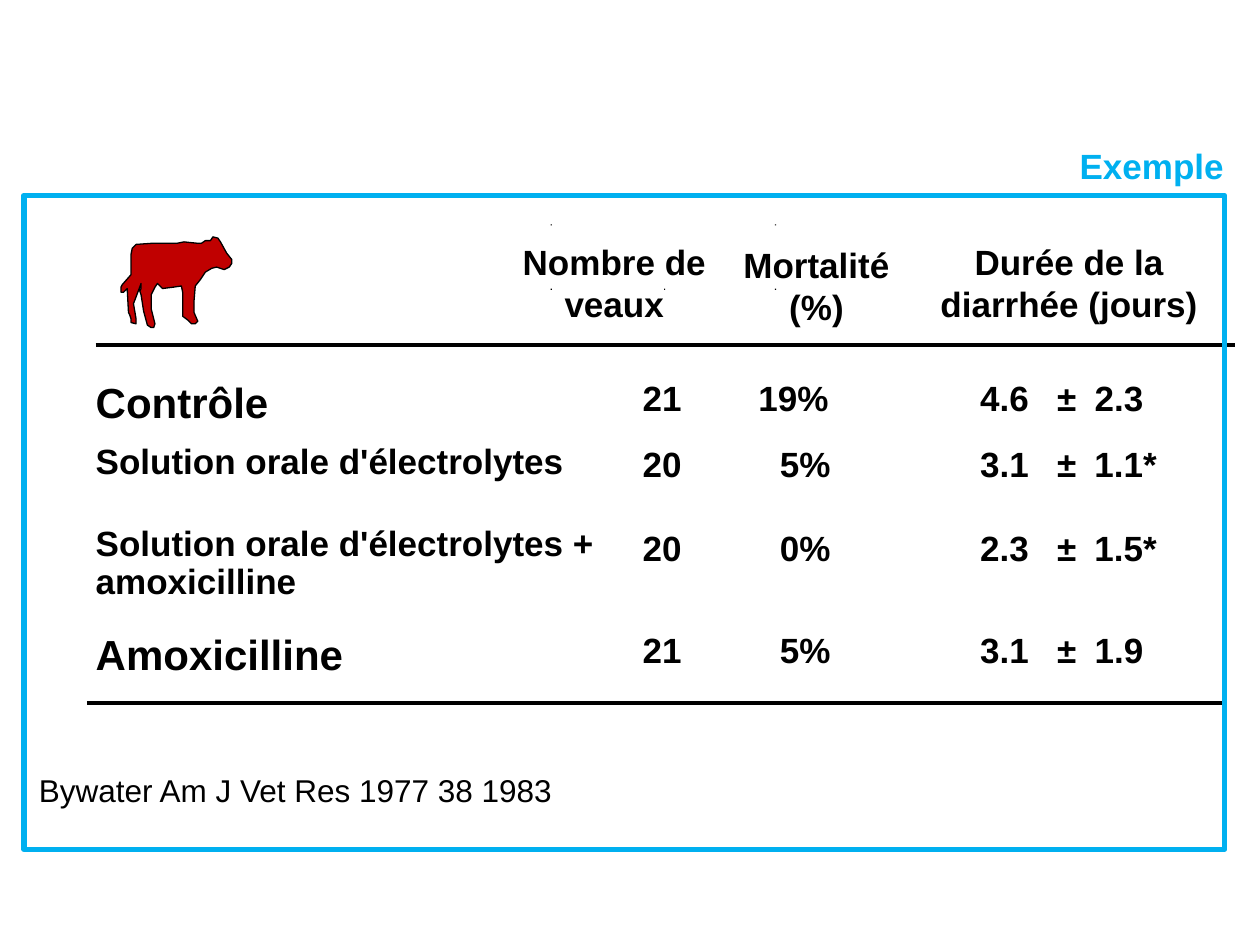
from lxml import etree
from pptx import Presentation
from pptx.dml.color import RGBColor
from pptx.enum.shapes import MSO_CONNECTOR, MSO_SHAPE
from pptx.enum.text import MSO_AUTO_SIZE, PP_ALIGN
from pptx.oxml.ns import qn
from pptx.util import Inches, Pt

STRAIGHT = MSO_CONNECTOR.STRAIGHT
RECTANGLE = MSO_SHAPE.RECTANGLE
FIT_TEXT = MSO_AUTO_SIZE.SHAPE_TO_FIT_TEXT
LEFT, CENTER = PP_ALIGN.LEFT, PP_ALIGN.CENTER

BLACK, RED, SKY = "000000", "C00000", "00B0F0"


def color(hex_string):
    return RGBColor.from_string(hex_string)


class SlideBuilder:
    """Holds the text style and the slide being filled."""

    font = "Arial"
    size = 20

    def __init__(self, slide):
        self.shapes = slide.shapes

    def text(self, box, content, size=size, ink=BLACK, bold=True, align=LEFT,
             wrap=False, margins=(0, 0), spacing=None):
        frame = self.shapes.add_textbox(*map(Inches, box)).text_frame
        frame.margin_left = frame.margin_right = Inches(margins[0])
        frame.margin_top = frame.margin_bottom = Inches(margins[1])
        frame.word_wrap = wrap
        frame.auto_size = FIT_TEXT
        frame.text = content
        for paragraph in frame.paragraphs:
            paragraph.alignment = align
            if spacing:
                paragraph.line_spacing = spacing
            for run in paragraph.runs:
                run.font.name = self.font
                run.font.size = Pt(size)
                run.font.bold = bold
                run.font.color.rgb = color(ink)

    def paint(self, shape, fill=None, line=None, width=0.75):
        shape.shadow.inherit = False
        if fill:
            shape.fill.solid()
            shape.fill.fore_color.rgb = color(fill)
        else:
            shape.fill.background()
        if line:
            shape.line.color.rgb = color(line)
            shape.line.width = Pt(width)
        else:
            shape.line.fill.background()

    def rectangle(self, box, **paint):
        self.paint(self.shapes.add_shape(RECTANGLE, *map(Inches, box)), **paint)

    def rule(self, left, right, y, width=2.25):
        line = self.shapes.add_connector(
            STRAIGHT, Inches(left), Inches(y), Inches(right), Inches(y))
        line.line.color.rgb = color(BLACK)
        line.line.width = Pt(width)
        etree.SubElement(line._element.spPr, qn("a:effectLst"))

    def outline(self, points, **paint):
        """Draw a closed shape through points given in inches."""
        start, *others = [(Inches(x), Inches(y)) for x, y in points]
        builder = self.shapes.build_freeform(*start)
        builder.add_line_segments(others, close=True)
        self.paint(builder.convert_to_shape(), **paint)


HEADERS = [
    ((3.95, 1.91, 1.85, 0.67), "Nombre de veaux", True),
    ((5.9, 1.93, 1.16, 0.67), "Mortalité\n(%)", False),
    ((7.38, 1.91, 2.21, 0.67), "Durée de la diarrhée (jours)", True),
]

# Row top, calves, mortality, mean duration, deviation
RESULTS = [
    (2.99, "21", "19%", "4.6", " 2.3"),
    (3.51, "20", "5%", "3.1", " 1.1*"),
    (4.18, "20", "0%", "2.3", " 1.5*"),
    (4.99, "21", "5%", "3.1", " 1.9"),
]

TREATMENTS = [
    ((0.76, 2.99, 1.38, 0.4), "Contrôle", {"size": 24}),
    ((0.76, 3.49, 3.74, 0.34), "Solution orale d'électrolytes", {}),
    ((0.76, 4.18, 3.96, 0.61), "Solution orale d'électrolytes + amoxicilline",
     {"wrap": True, "spacing": 0.9}),
    ((0.76, 4.99, 1.98, 0.4), "Amoxicilline", {"size": 24}),
]

HEADER_DOTS = [(4.37, 1.78), (6.15, 1.78), (4.37, 2.29), (5.27, 2.29), (6.15, 2.29)]

CALF = [
    (1.08, 2.57), (1.04, 2.56), (1.04, 2.53), (1.03, 2.5), (1.02, 2.48),
    (1.01, 2.29), (0.98, 2.32), (0.96, 2.32), (0.96, 2.28), (0.97, 2.26),
    (1.04, 2.18), (1.04, 2.02), (1.05, 1.97), (1.08, 1.94), (1.22, 1.93),
    (1.32, 1.93), (1.41, 1.93), (1.46, 1.92), (1.56, 1.93), (1.6, 1.93),
    (1.63, 1.91), (1.67, 1.91), (1.69, 1.88), (1.73, 1.89), (1.75, 1.92),
    (1.8, 2.01), (1.84, 2.06), (1.84, 2.09), (1.82, 2.12), (1.78, 2.14),
    (1.72, 2.12), (1.68, 2.13), (1.63, 2.16), (1.59, 2.22), (1.55, 2.27),
    (1.54, 2.39), (1.54, 2.48), (1.57, 2.55), (1.55, 2.57), (1.52, 2.57),
    (1.49, 2.54), (1.45, 2.51), (1.45, 2.42), (1.45, 2.32), (1.44, 2.27),
    (1.37, 2.28), (1.29, 2.29), (1.25, 2.25), (1.23, 2.28), (1.2, 2.34),
    (1.2, 2.45), (1.23, 2.57), (1.22, 2.6), (1.2, 2.6), (1.17, 2.58),
    (1.14, 2.47), (1.12, 2.34), (1.11, 2.31), (1.12, 2.29), (1.12, 2.25),
    (1.09, 2.33), (1.06, 2.41), (1.08, 2.53),
]


def main():
    deck = Presentation()
    deck.slide_width, deck.slide_height = Inches(10), Inches(7.5)
    page = SlideBuilder(deck.slides.add_slide(deck.slide_layouts[6]))

    for box, heading, wrap in HEADERS:
        page.text(box, heading, align=CENTER, wrap=wrap)
    for x, y in HEADER_DOTS:
        page.rectangle((x, y, 0.01, 0.01), fill=BLACK)

    for box, treatment, style in TREATMENTS:
        page.text(box, treatment, **style)
    for top, calves, mortality, mean, deviation in RESULTS:
        cells = [
            (5.1, 0.31, calves),
            (6.02, 0.56, mortality) if len(mortality) == 3 else (6.19, 0.41, mortality),
            (7.78, 0.47, mean),
            (8.39, 0.15, "±"),
            (8.61, 0.6 if "*" in deviation else 0.48, deviation),
        ]
        for left, width, value in cells:
            page.text((left, top, width, 0.34), value)

    page.rule(0.76, 9.8, 2.74)
    page.rule(0.69, 9.72, 5.58)
    page.outline(CALF, fill=RED, line=BLACK)

    page.text((0.19, 6.04, 4.31, 0.47), "Bywater Am J Vet Res 1977 38 1983",
              size=18, bold=False, align=CENTER, margins=(0.1, 0.08))
    page.rectangle((0.19, 1.55, 9.53, 5.19), line=SKY, width=3)
    page.text((8.47, 1.1, 1.36, 0.44), "Exemple", ink=SKY, margins=(0.1, 0.05))

    deck.save("out.pptx")


if __name__ == "__main__":
    main()
